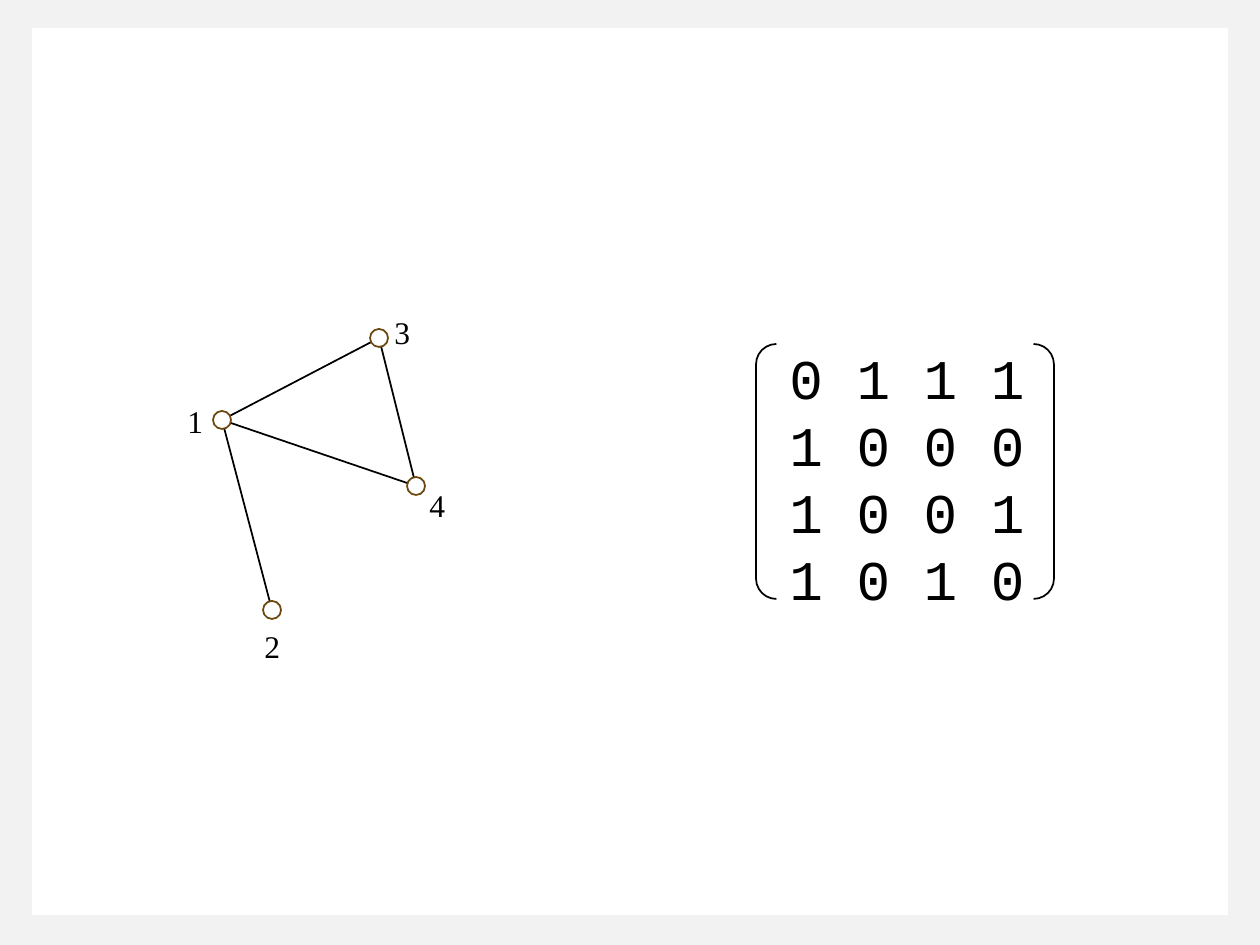
from lxml.etree import SubElement
from pptx import Presentation
from pptx.dml.color import RGBColor
from pptx.enum.shapes import MSO_CONNECTOR, MSO_SHAPE
from pptx.enum.text import MSO_AUTO_SIZE
from pptx.oxml.ns import qn
from pptx.util import Emu, Pt

BLACK = RGBColor(0x00, 0x00, 0x00)
WHITE = RGBColor(0xFF, 0xFF, 0xFF)
GREY = RGBColor(0xF2, 0xF2, 0xF2)
BROWN = RGBColor(0x6C, 0x47, 0x0D)

NODES = {"3": (379, 338), "1": (222, 420), "2": (272, 610), "4": (416, 486)}
EDGES = ["21", "13", "14", "34"]
LABELS = {"1": (175, 394), "2": (252, 619), "3": (382, 305), "4": (417, 478)}
MATRIX = ["0 1 1 1", "1 0 0 0", "1 0 0 1", "1 0 1 0"]
RADIUS = 9


def px(n):
    return Emu(round(n * 914400 / 126))


class Sketch:
    """Draws graph and matrix parts on one slide in a shared style."""

    def __init__(self, slide):
        self.slide = slide
        self.shapes = slide.shapes
        self.width = Pt(1)

    def ground(self, color):
        fill = self.slide.background.fill
        fill.solid()
        fill.fore_color.rgb = color

    def shape(self, kind, x, y, w, h, fill=None, line=None):
        item = self.shapes.add_shape(kind, px(x), px(y), px(w), px(h))
        item.shadow.inherit = False
        if fill is None:
            item.fill.background()
        else:
            item.fill.solid()
            item.fill.fore_color.rgb = fill
        if line is None:
            item.line.fill.background()
        else:
            item.line.color.rgb = line
            item.line.width = self.width
        return item

    def edge(self, start, end):
        line = self.shapes.add_connector(
            MSO_CONNECTOR.STRAIGHT, *map(px, start + end))
        line.line.color.rgb = BLACK
        line.line.width = self.width
        SubElement(line._element.spPr, qn("a:effectLst"))

    def node(self, x, y):
        side = 2 * RADIUS
        self.shape(MSO_SHAPE.OVAL, x - RADIUS, y - RADIUS, side, side, WHITE, BROWN)

    def text(self, rows, x, y, w, h, font, size, top):
        frame = self.shapes.add_textbox(px(x), px(y), px(w), px(h)).text_frame
        frame.word_wrap = False
        frame.auto_size = MSO_AUTO_SIZE.SHAPE_TO_FIT_TEXT
        frame.margin_top = px(top)
        frame.margin_bottom = px(4)
        for i, row in enumerate(rows):
            para = frame.add_paragraph() if i else frame.paragraphs[0]
            para.line_spacing = Pt(size * 1.2)
            run = para.add_run()
            run.text = row
            run.font.name = font
            run.font.size = Pt(size)
            run.font.color.rgb = BLACK


def main():
    deck = Presentation()
    deck.slide_width, deck.slide_height = px(1260), px(945)
    art = Sketch(deck.slides.add_slide(deck.slide_layouts[6]))
    art.ground(GREY)
    art.shape(MSO_SHAPE.RECTANGLE, 32, 28, 1196, 887, WHITE)
    for a, b in EDGES:
        art.edge(NODES[a], NODES[b])
    for spot in NODES.values():
        art.node(*spot)
    for name, spot in LABELS.items():
        art.text([name], *spot, 40, 50, "Times New Roman", 18, 8)
    art.text(MATRIX, 777, 331, 263, 285, "Courier New", 32, 12)
    pair = art.shape(MSO_SHAPE.DOUBLE_BRACKET, 756, 344, 298, 255, line=BLACK)
    pair.adjustments[0] = 0.08
    deck.save("out.pptx")


if __name__ == "__main__":
    main()
